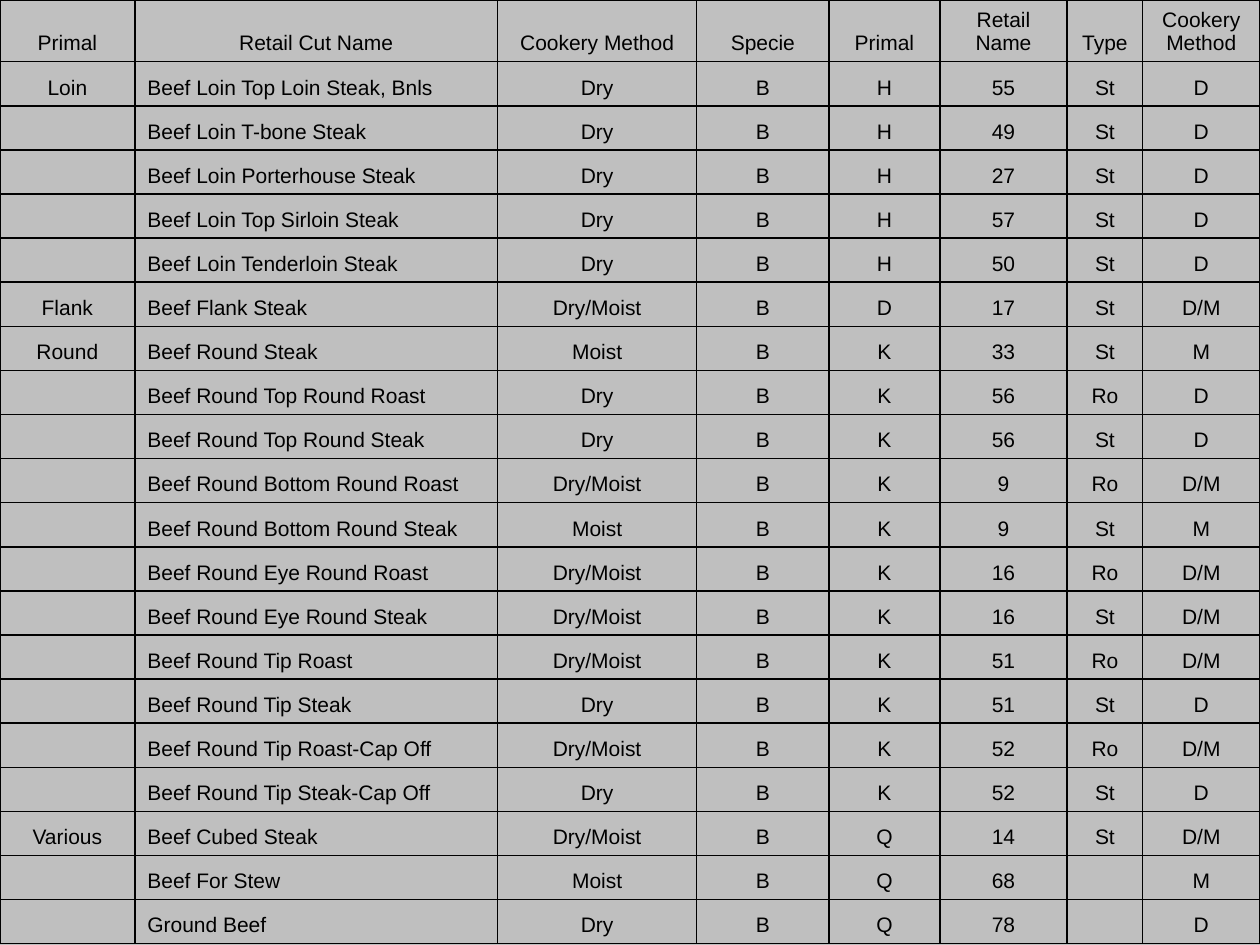
"""Build a slide with a table of beef retail cuts and their codes."""
from dataclasses import dataclass
from typing import NamedTuple

from lxml import etree
from pptx import Presentation
from pptx.dml.color import RGBColor
from pptx.enum.text import MSO_ANCHOR, PP_ALIGN
from pptx.oxml.ns import qn
from pptx.util import Inches, Pt

LEFT, MID = PP_ALIGN.LEFT, PP_ALIGN.CENTER
LOW = MSO_ANCHOR.BOTTOM


@dataclass(frozen=True)
class Theme:
    """Colours, type and line sizes."""
    back: str = "BFBFBF"
    head: str = "C0C0C0"
    ink: str = "000000"
    font: str = "Arial"
    size: int = 12
    rule: int = 1


class Cut(NamedTuple):
    """A retail cut with its cookery method, number and type."""
    name: str
    method: str
    number: int
    kind: str


class Primal(NamedTuple):
    """A primal with its code letter and cuts."""
    name: str
    code: str
    cuts: list[Cut]


class Column(NamedTuple):
    """A table column with its heading, width and alignment."""
    title: str
    width: float
    align: PP_ALIGN = MID


THEME = Theme()
HEAD_HIGH, ROW_HIGH = 0.49, 0.35
SPECIE = "B"

COLUMNS = [
    Column("Primal", 1.07),
    Column("Retail Cut Name", 2.88, LEFT),
    Column("Cookery Method", 1.58),
    Column("Specie", 1.05),
    Column("Primal", 0.88),
    Column("Retail Name", 1.01),
    Column("Type", 0.6),
    Column("Cookery Method", 0.93),
]

PRIMALS = [
    Primal("Loin", "H", [
        Cut("Beef Loin Top Loin Steak, Bnls", "Dry", 55, "St"),
        Cut("Beef Loin T-bone Steak", "Dry", 49, "St"),
        Cut("Beef Loin Porterhouse Steak", "Dry", 27, "St"),
        Cut("Beef Loin Top Sirloin Steak", "Dry", 57, "St"),
        Cut("Beef Loin Tenderloin Steak", "Dry", 50, "St"),
    ]),
    Primal("Flank", "D", [Cut("Beef Flank Steak", "Dry/Moist", 17, "St")]),
    Primal("Round", "K", [
        Cut("Beef Round Steak", "Moist", 33, "St"),
        Cut("Beef Round Top Round Roast", "Dry", 56, "Ro"),
        Cut("Beef Round Top Round Steak", "Dry", 56, "St"),
        Cut("Beef Round Bottom Round Roast", "Dry/Moist", 9, "Ro"),
        Cut("Beef Round Bottom Round Steak", "Moist", 9, "St"),
        Cut("Beef Round Eye Round Roast", "Dry/Moist", 16, "Ro"),
        Cut("Beef Round Eye Round Steak", "Dry/Moist", 16, "St"),
        Cut("Beef Round Tip Roast", "Dry/Moist", 51, "Ro"),
        Cut("Beef Round Tip Steak", "Dry", 51, "St"),
        Cut("Beef Round Tip Roast-Cap Off", "Dry/Moist", 52, "Ro"),
        Cut("Beef Round Tip Steak-Cap Off", "Dry", 52, "St"),
    ]),
    Primal("Various", "Q", [
        Cut("Beef Cubed Steak", "Dry/Moist", 14, "St"),
        Cut("Beef For Stew", "Moist", 68, ""),
        Cut("Ground Beef", "Dry", 78, ""),
    ]),
]


def list_rows() -> list[list[str]]:
    """Return the body rows, naming each primal only on its first cut."""
    rows = []
    for primal in PRIMALS:
        for order, cut in enumerate(primal.cuts):
            short = "/".join(word[0] for word in cut.method.split("/"))
            rows.append([primal.name if order == 0 else "", cut.name, cut.method,
                         SPECIE, primal.code, str(cut.number), cut.kind, short])
    return rows


def add_rules(cell) -> None:
    """Draw a solid line on all four sides of a cell."""
    props = cell._tc.get_or_add_tcPr()
    for spot, side in enumerate(("lnL", "lnR", "lnT", "lnB")):
        line = etree.Element(qn(f"a:{side}"), w=str(Pt(THEME.rule)))
        fill = etree.SubElement(line, qn("a:solidFill"))
        etree.SubElement(fill, qn("a:srgbClr"), val=THEME.ink)
        props.insert(spot, line)


def fill_cell(cell, text: str, align: PP_ALIGN, head: bool) -> None:
    """Write and format one cell."""
    cell.vertical_anchor = LOW
    if head:
        cell.fill.solid()
        cell.fill.fore_color.rgb = RGBColor.from_string(THEME.head)
    else:
        cell.fill.background()
    add_rules(cell)
    para = cell.text_frame.paragraphs[0]
    para.alignment = align
    if not text:
        etree.SubElement(para._p, qn("a:endParaRPr"), sz=str(THEME.size * 100))
        return
    para.text = text
    font = para.runs[0].font
    font.name = THEME.font
    font.size = Pt(THEME.size)
    font.bold = False
    font.color.rgb = RGBColor.from_string(THEME.ink)


def add_cuts(slide) -> None:
    """Add the table of cuts across the whole slide."""
    rows = [[column.title for column in COLUMNS]] + list_rows()
    width = sum(column.width for column in COLUMNS)
    height = HEAD_HIGH + ROW_HIGH * (len(rows) - 1)
    table = slide.shapes.add_table(len(rows), len(COLUMNS), 0, 0,
                                   Inches(width), Inches(height)).table
    table.first_row = table.horz_banding = False
    for index, column in enumerate(COLUMNS):
        table.columns[index].width = Inches(column.width)
    for index, row in enumerate(rows):
        head = index == 0
        table.rows[index].height = Inches(HEAD_HIGH if head else ROW_HIGH)
        for place, (column, text) in enumerate(zip(COLUMNS, row)):
            fill_cell(table.cell(index, place), text,
                      MID if head else column.align, head)


def main() -> None:
    """Build and save the slide."""
    deck = Presentation()
    deck.slide_width, deck.slide_height = Inches(10), Inches(7.5)
    slide = deck.slides.add_slide(deck.slide_layouts[6])
    fill = slide.background.fill
    fill.solid()
    fill.fore_color.rgb = RGBColor.from_string(THEME.back)
    add_cuts(slide)
    deck.save("out.pptx")


if __name__ == "__main__":
    main()
